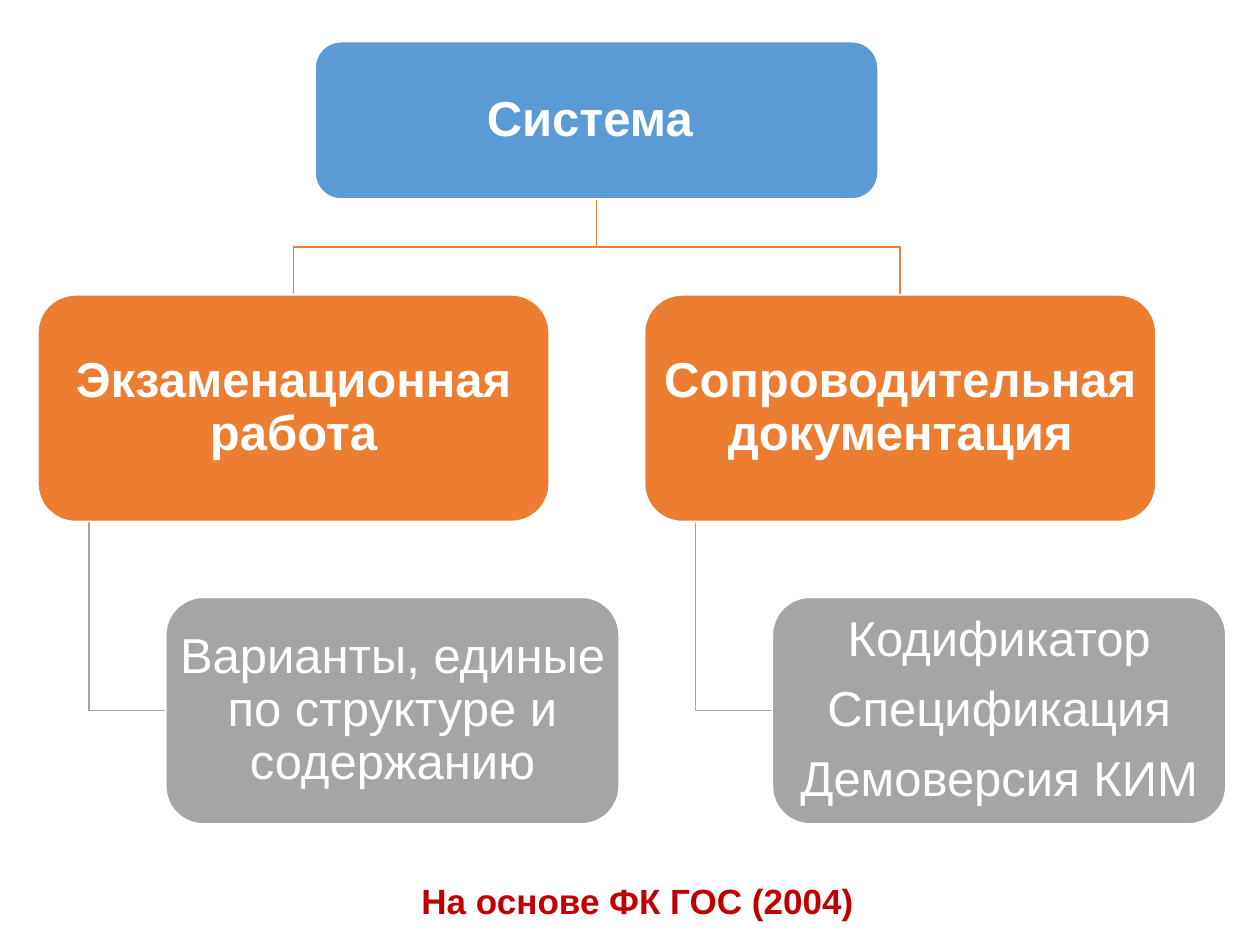
from pptx import Presentation
from pptx.dml.color import RGBColor
from pptx.enum.shapes import MSO_SHAPE
from pptx.enum.text import MSO_ANCHOR, PP_ALIGN
from pptx.util import Inches, Pt

ROUNDED = MSO_SHAPE.ROUNDED_RECTANGLE
MIDDLE, TOP = MSO_ANCHOR.MIDDLE, MSO_ANCHOR.TOP
CENTER = PP_ALIGN.CENTER

WHITE = RGBColor(0xFF, 0xFF, 0xFF)
BLUE = RGBColor(0x5B, 0x9B, 0xD5)
ORANGE = RGBColor(0xED, 0x7D, 0x31)
GRAY = RGBColor(0xA5, 0xA5, 0xA5)
RED = RGBColor(0xC0, 0x00, 0x00)

WIDTH, HEIGHT = Inches(10), Inches(7.5)
COL, ROW = WIDTH / 100, HEIGHT / 75

ROOT = (25, 3.3, 44.7, 12.5)
BRANCH_LEFT, BRANCH_TOP, BRANCH_STEP = 3, 23.4, 48.15
TOPIC_W, DETAIL_W, NODE_H = 40.6, 36, 18
DETAIL_DX, DETAIL_DY, STEM_DX = 10.15, 24, 4.05
FOOTER = (30.4, 69.3, 40.4, 4.4)
BRANCHES = [
    ("Экзаменационная работа", ["Варианты, единые по структуре и содержанию"]),
    ("Сопроводительная документация",
     ["Кодификатор", "Спецификация", "Демоверсия КИМ"]),
]


def grid(box):
    """Turn columns and rows into slide lengths."""
    return [round(v * u) for v, u in zip(box, (COL, ROW, COL, ROW))]


def add_text(sp, lines, size=28, color=WHITE, bold=False, spacing=0.9,
             after=9.8, anchor=MIDDLE, margin=None):
    """Fill a shape with centred paragraphs in one format."""
    tf = sp.text_frame
    tf.word_wrap = True
    tf.vertical_anchor = anchor
    if margin is not None:
        tf.margin_left = tf.margin_right = margin
        tf.margin_top = tf.margin_bottom = margin
    for i, line in enumerate(lines):
        p = tf.paragraphs[0] if i == 0 else tf.add_paragraph()
        p.alignment = CENTER
        p.line_spacing = spacing
        p.space_after = Pt(after)
        r = p.add_run()
        r.text = line
        r.font.name = "Arial"
        r.font.size = Pt(size)
        r.font.bold = bold
        r.font.color.rgb = color


def add_node(slide, box, lines, fill, bold=False):
    """Place a rounded box with its text."""
    sp = slide.shapes.add_shape(ROUNDED, *grid(box))
    sp.shadow.inherit = False
    sp.fill.solid()
    sp.fill.fore_color.rgb = fill
    sp.line.color.rgb = WHITE
    sp.line.width = Pt(1)
    add_text(sp, lines, bold=bold, margin=Inches(0.01))


def add_link(slide, points, color):
    """Draw an open line through grid points."""
    start, *rest = [grid(point) for point in points]
    builder = slide.shapes.build_freeform(*start)
    builder.add_line_segments(rest, close=False)
    sp = builder.convert_to_shape()
    sp.shadow.inherit = False
    sp.fill.background()
    sp.line.color.rgb = color
    sp.line.width = Pt(1)


def add_branch(slide, left, top, parent, topic, details):
    """Place a topic, its details and the links from the parent box."""
    px, py, pw, ph = parent
    start_x, start_y = px + pw / 2, py + ph
    mid_x, mid_y = left + TOPIC_W / 2, (start_y + top) / 2
    add_link(slide, [(start_x, start_y), (start_x, mid_y),
                     (mid_x, mid_y), (mid_x, top)], ORANGE)
    stem_x = left + STEM_DX
    detail_x, detail_y = left + DETAIL_DX, top + DETAIL_DY
    end_y = detail_y + NODE_H / 2
    add_link(slide, [(stem_x, top + NODE_H), (stem_x, end_y),
                     (detail_x, end_y)], GRAY)
    add_node(slide, (left, top, TOPIC_W, NODE_H), [topic], ORANGE, bold=True)
    add_node(slide, (detail_x, detail_y, DETAIL_W, NODE_H), details, GRAY)


def add_footer(slide, box):
    """Place the closing line."""
    sp = slide.shapes.add_textbox(*grid(box))
    add_text(sp, ["На основе ФК ГОС (2004)"], size=20, color=RED, bold=True,
             spacing=1.0, after=0, anchor=TOP)


def main():
    """Build and save the slide."""
    prs = Presentation()
    prs.slide_width, prs.slide_height = WIDTH, HEIGHT
    slide = prs.slides.add_slide(prs.slide_layouts[6])
    for i, (topic, details) in enumerate(BRANCHES):
        left = BRANCH_LEFT + i * BRANCH_STEP
        add_branch(slide, left, BRANCH_TOP, ROOT, topic, details)
    add_node(slide, ROOT, ["Система "], BLUE, bold=True)
    add_footer(slide, FOOTER)
    prs.save("out.pptx")


if __name__ == "__main__":
    main()
